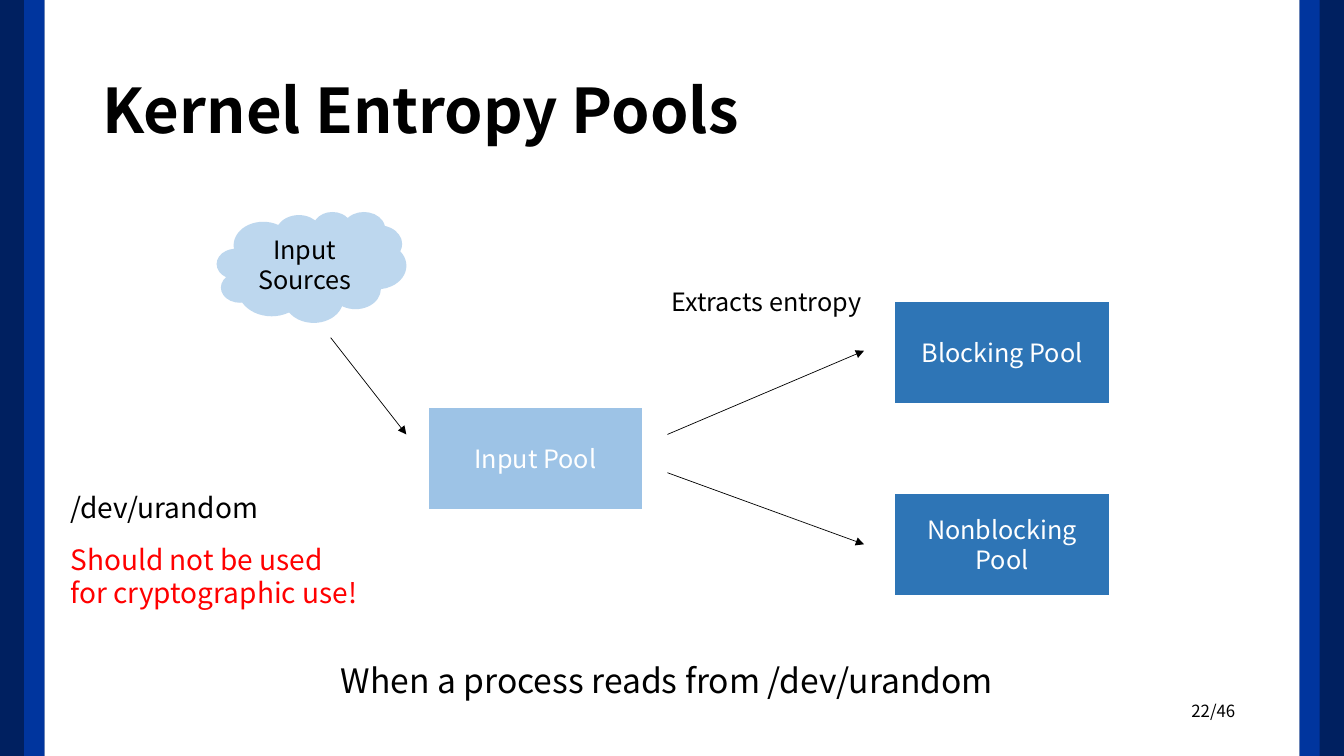
from dataclasses import dataclass

from lxml import etree
from pptx import Presentation
from pptx.dml.color import RGBColor
from pptx.enum import shapes, text
from pptx.oxml import ns
from pptx.slide import Slide
from pptx.text.text import TextFrame
from pptx.util import Inches, Pt

FONT = "Noto Sans CJK KR"
BLACK = RGBColor(0x00, 0x00, 0x00)
WHITE = RGBColor(0xFF, 0xFF, 0xFF)
RED = RGBColor(0xFF, 0x00, 0x00)
NAVY = RGBColor(0x00, 0x20, 0x60)
ROYAL = RGBColor(0x00, 0x35, 0x9E)
POOL_BLUE = RGBColor(0x2E, 0x75, 0xB6)
INPUT_BLUE = RGBColor(0x9D, 0xC3, 0xE6)
CLOUD_BLUE = RGBColor(0xBD, 0xD7, 0xEE)

SLIDE_WIDTH, SLIDE_HEIGHT = 13.33, 7.5
BAND_WIDTH, STRIPE_WIDTH = 0.44, 0.2
POOL_WIDTH, POOL_HEIGHT = 2.12, 1

PROCESS = shapes.MSO_SHAPE.FLOWCHART_PROCESS
CLOUD = shapes.MSO_SHAPE.CLOUD
RECTANGLE = shapes.MSO_SHAPE.RECTANGLE
LEFT, CENTER, RIGHT = text.PP_ALIGN.LEFT, text.PP_ALIGN.CENTER, text.PP_ALIGN.RIGHT
TOP, MIDDLE = text.MSO_ANCHOR.TOP, text.MSO_ANCHOR.MIDDLE


@dataclass(frozen=True)
class Block:
    """A filled preset shape, with or without a centred label."""
    left: float
    top: float
    width: float
    height: float
    fill: RGBColor
    label: str = ""
    color: RGBColor = WHITE
    preset: shapes.MSO_SHAPE = RECTANGLE


@dataclass(frozen=True)
class Caption:
    left: float
    top: float
    width: float
    height: float
    words: str
    size: float
    color: RGBColor = BLACK
    align: text.PP_ALIGN = LEFT
    anchor: text.MSO_ANCHOR = TOP
    bold: bool = False
    wrap: bool = True
    line_spacing: float = 1.0


@dataclass(frozen=True)
class Arrow:
    start: tuple[float, float]
    end: tuple[float, float]


RIGHT_EDGE = SLIDE_WIDTH - BAND_WIDTH
BLOCKS = [
    Block(0, 0, BAND_WIDTH, SLIDE_HEIGHT, NAVY),
    Block(RIGHT_EDGE, 0, BAND_WIDTH, SLIDE_HEIGHT, NAVY),
    Block(BAND_WIDTH - STRIPE_WIDTH, 0, STRIPE_WIDTH, SLIDE_HEIGHT, ROYAL),
    Block(RIGHT_EDGE, 0, STRIPE_WIDTH, SLIDE_HEIGHT, ROYAL),
    Block(4.25, 4.05, POOL_WIDTH, POOL_HEIGHT, INPUT_BLUE, "Input Pool", preset=PROCESS),
    Block(8.88, 3, POOL_WIDTH, POOL_HEIGHT, POOL_BLUE, "Blocking Pool", preset=PROCESS),
    Block(8.88, 4.9, POOL_WIDTH, POOL_HEIGHT, POOL_BLUE, "Nonblocking Pool", preset=PROCESS),
    Block(2.15, 2.1, 1.88, 1.1, CLOUD_BLUE, "Input Sources", BLACK, CLOUD),
]
ARROWS = [
    Arrow((6.62, 4.31), (8.57, 3.48)),
    Arrow((6.62, 4.69), (8.57, 5.4)),
    Arrow((3.28, 3.35), (4.03, 4.31)),
]
CAPTIONS = [
    Caption(0.92, 0.4, 11.5, 1.45, "Kernel Entropy Pools", 44,
            anchor=MIDDLE, bold=True, line_spacing=0.9),
    Caption(3.28, 6.5, 7.32, 0.5, "When a process reads from /dev/urandom", 24),
    Caption(6.56, 2.79, 2.16, 0.4, "Extracts entropy", 18, wrap=False),
    Caption(0.6, 4.82, 2.27, 0.44, "/dev/urandom", 20),
    Caption(0.6, 5.33, 3.12, 0.77, "Should not be used for cryptographic use!", 20, RED),
    Caption(9.4, 6.9, 2.95, 0.3, "22/46", 12, align=RIGHT),
]


def write(frame: TextFrame, words: str, size: float, color: RGBColor,
          align: text.PP_ALIGN, bold: bool = False, line_spacing: float = 1.0) -> None:
    para = frame.paragraphs[0]
    para.alignment = align
    para.line_spacing = line_spacing
    span = para.add_run()
    span.text = words
    span.font.name = FONT
    span.font.size = Pt(size)
    span.font.bold = bold
    span.font.color.rgb = color


def add_block(page: Slide, block: Block) -> None:
    shape = page.shapes.add_shape(block.preset, Inches(block.left), Inches(block.top),
                                  Inches(block.width), Inches(block.height))
    shape.shadow.inherit = False
    shape.fill.solid()
    shape.fill.fore_color.rgb = block.fill
    shape.line.fill.background()
    if block.label:
        shape.text_frame.word_wrap = True
        shape.text_frame.vertical_anchor = MIDDLE
        write(shape.text_frame, block.label, 18, block.color, CENTER)


def add_caption(page: Slide, caption: Caption) -> None:
    box = page.shapes.add_textbox(Inches(caption.left), Inches(caption.top),
                                  Inches(caption.width), Inches(caption.height))
    box.text_frame.word_wrap = caption.wrap
    box.text_frame.vertical_anchor = caption.anchor
    write(box.text_frame, caption.words, caption.size, caption.color,
          caption.align, caption.bold, caption.line_spacing)


def add_arrow(page: Slide, arrow: Arrow) -> None:
    connector = page.shapes.add_connector(
        shapes.MSO_CONNECTOR.STRAIGHT,
        *(Inches(value) for value in arrow.start + arrow.end))
    connector.line.color.rgb = BLACK
    connector.line.width = Pt(0.5)
    properties = connector.element.spPr
    outline = properties.find(ns.qn("a:ln"))
    etree.SubElement(outline, ns.qn("a:tailEnd"), type="triangle")
    etree.SubElement(properties, ns.qn("a:effectLst"))


def main() -> None:
    deck = Presentation()
    deck.slide_width = Inches(SLIDE_WIDTH)
    deck.slide_height = Inches(SLIDE_HEIGHT)
    page = deck.slides.add_slide(deck.slide_layouts[6])
    for block in BLOCKS:
        add_block(page, block)
    for arrow in ARROWS:
        add_arrow(page, arrow)
    for caption in CAPTIONS:
        add_caption(page, caption)
    deck.save("out.pptx")


if __name__ == "__main__":
    main()
